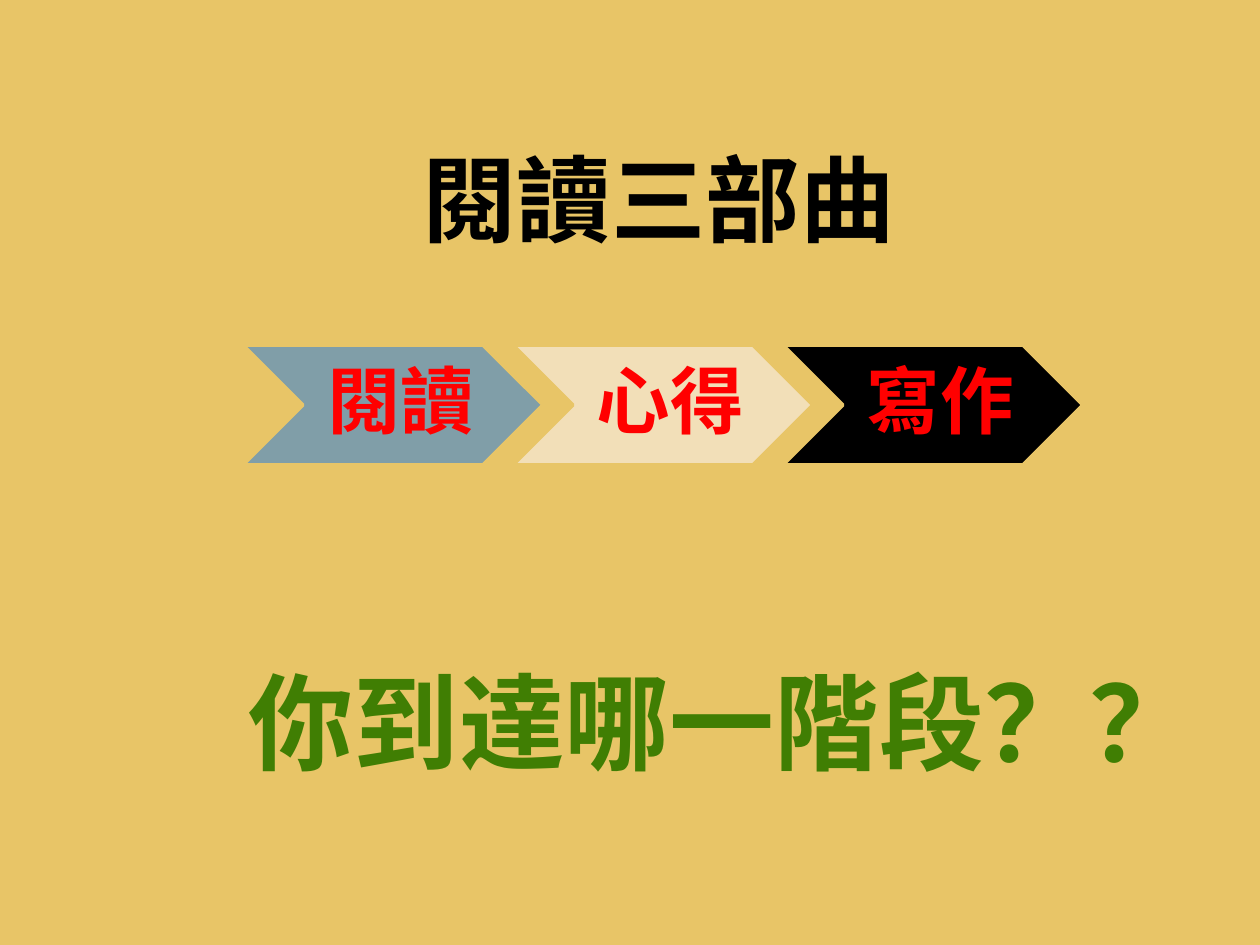
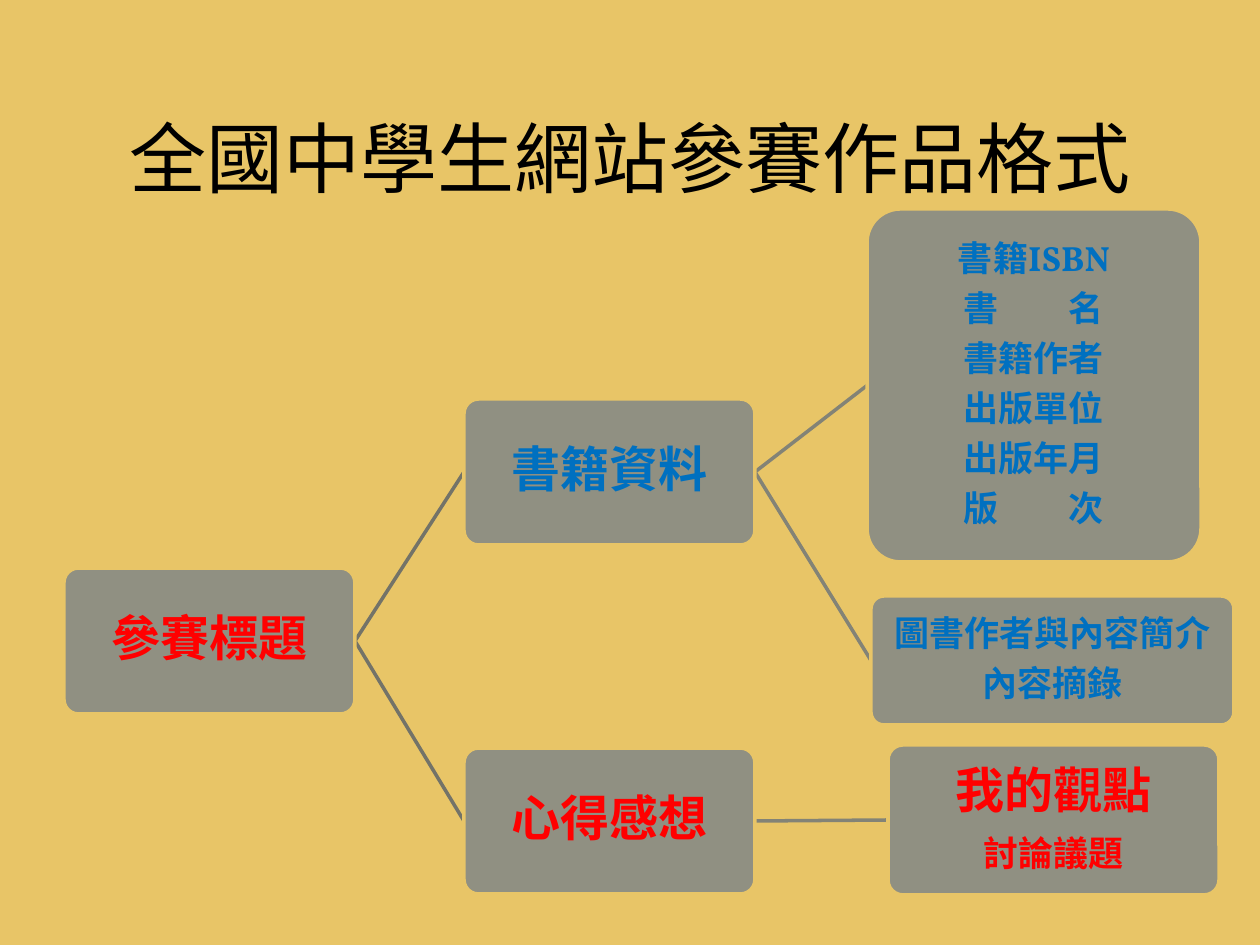
from dataclasses import dataclass

from lxml import etree
from pptx import Presentation
from pptx import util as u
from pptx.dml.color import RGBColor
from pptx.enum import shapes, text
from pptx.oxml.ns import qn


@dataclass(frozen=True)
class Theme:
    face: str = "Vollkorn"
    back: str = "E8C567"
    ink: str = "000000"
    red: str = "FF0000"
    blue: str = "0070C0"
    green: str = "407E03"
    box: str = "909082"
    near: str = "737368"
    far: str = "838376"
    edge: int = 2
    cover: int = 54
    title: int = 44
    ask: int = 60
    step: int = 42
    head: int = 28
    item: int = 20


T = Theme()

COVER = ("閱讀三部曲", (123, 96, 1071, 203))
ASK = ("你到達哪一階段？？", (203, 651, 932, 242))
STEPS = [("閱讀", "809EA8"), ("心得", "F2DFB8"), ("寫作", T.ink)]
FIRST, PITCH = (243, 345, 300, 120), 270

FORM = ("全國中學生網站參賽作品格式", (95, 55, 1071, 203))
NODE = (291, 146)
TREE = {
    "root": ((64, 568, *NODE), T.red, [("參賽標題", T.head)]),
    "book": ((464, 399, *NODE), T.blue, [("書籍資料", T.head)]),
    "data": ((867, 209, 334, 353), T.blue, [
        (line, T.item) for line in
        ("書籍ISBN", "書　　名", "書籍作者", "出版單位", "出版年月", "版　　次")]),
    "brief": ((871, 596, 363, 129), T.blue, [
        ("圖書作者與內容簡介", T.item), ("內容摘錄", T.item)]),
    "mind": ((464, 748, *NODE), T.red, [("心得感想", T.head)]),
    "view": ((888, 745, 331, 150), T.red, [
        ("我的觀點", T.head), ("討論議題", T.item)]),
}
LINKS = [
    ("root", "book", T.near), ("root", "mind", T.near),
    ("book", "data", T.far), ("book", "brief", T.far),
    ("mind", "view", T.far),
]


def px(n):
    return u.Emu(round(n * 914400 / 126))


def rgb(code):
    return RGBColor.from_string(code)


def style(para, size, color, bold=True):
    para.alignment = text.PP_ALIGN.CENTER
    font = para.font
    font.name, font.size, font.bold = T.face, u.Pt(size), bold
    font.color.rgb = rgb(color)


def fill_in(holder, content, size, color, bold=True):
    words, place = content
    holder.left, holder.top, holder.width, holder.height = map(px, place)
    frame = holder.text_frame
    frame.text = words
    frame.auto_size = text.MSO_AUTO_SIZE.NONE
    style(frame.paragraphs[0], size, color, bold)


def add_box(slide, kind, place, fill, color, lines, pads):
    box = slide.shapes.add_shape(kind, *map(px, place))
    box.shadow.inherit = False
    box.fill.solid()
    box.fill.fore_color.rgb = rgb(fill)
    box.line.color.rgb = rgb(T.back)
    box.line.width = u.Pt(T.edge)
    frame = box.text_frame
    frame.word_wrap = True
    frame.vertical_anchor = text.MSO_ANCHOR.MIDDLE
    (frame.margin_left, frame.margin_top,
     frame.margin_right, frame.margin_bottom) = map(px, pads)
    for i, (words, size) in enumerate(lines):
        para = frame.add_paragraph() if i else frame.paragraphs[0]
        para.text = words
        para.line_spacing = 0.9
        after = etree.SubElement(para._p.get_or_add_pPr(), qn("a:spcAft"))
        etree.SubElement(after, qn("a:spcPct"), val="35000")
        style(para, size, color)
    return box


def add_link(slide, color):
    link = slide.shapes.add_connector(shapes.MSO_CONNECTOR.STRAIGHT, 0, 0, 0, 0)
    link.line.color.rgb = rgb(color)
    link.line.width = u.Pt(T.edge)
    etree.SubElement(link._element.spPr, qn("a:effectLst"))
    return link


def steps(deck):
    slide = deck.slides.add_slide(deck.slide_layouts[0])
    left, top, wide, high = FIRST
    for i, (words, fill) in enumerate(STEPS):
        add_box(slide, shapes.MSO_SHAPE.CHEVRON,
                (left + i * PITCH, top, wide, high), fill, T.red,
                [(words, T.step)], (23, 8, 8, 8))
    fill_in(slide.shapes.title, COVER, T.cover, T.ink)
    fill_in(slide.placeholders[1], ASK, T.ask, T.green)


def tree(deck):
    slide = deck.slides.add_slide(deck.slide_layouts[5])
    fill_in(slide.shapes.title, FORM, T.title, T.ink, False)
    links = [add_link(slide, color) for _, _, color in LINKS]
    nodes = {}
    for name, (place, color, lines) in TREE.items():
        box = add_box(slide, shapes.MSO_SHAPE.ROUNDED_RECTANGLE, place,
                      T.box, color, lines, (2, 2, 2, 2))
        box.adjustments[0] = 0.1
        nodes[name] = box
    for link, (start, end, _) in zip(links, LINKS):
        link.begin_connect(nodes[start], 3)
        link.end_connect(nodes[end], 1)


def main():
    deck = Presentation()
    deck.slide_width, deck.slide_height = px(1260), px(945)
    back = deck.slide_master.background.fill
    back.solid()
    back.fore_color.rgb = rgb(T.back)
    steps(deck)
    tree(deck)
    deck.save("out.pptx")


if __name__ == "__main__":
    main()
